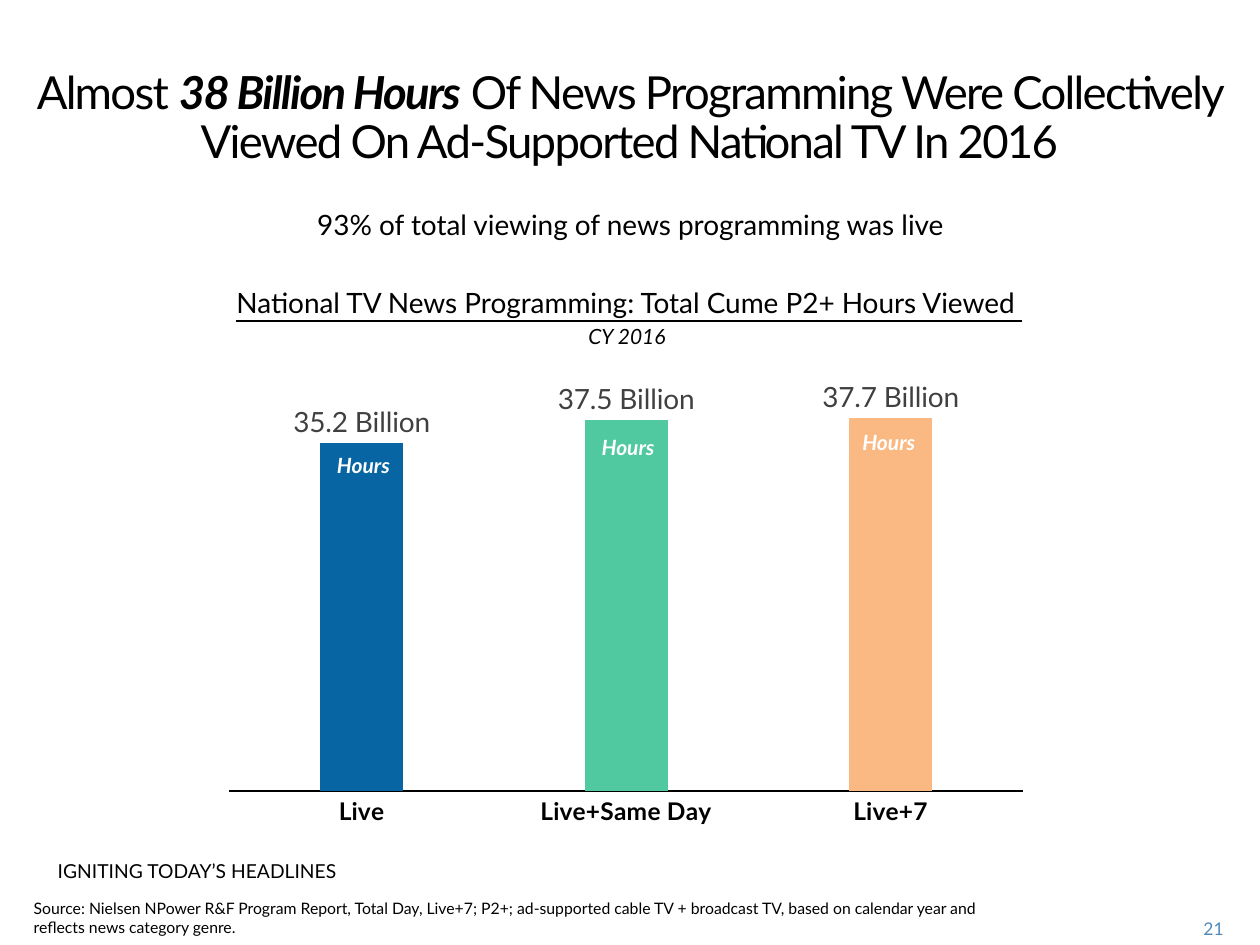
from lxml import etree
from pptx import Presentation
from pptx.chart.data import CategoryChartData
from pptx.dml.color import RGBColor
from pptx.enum.chart import XL_CHART_TYPE, XL_LABEL_POSITION, XL_TICK_MARK
from pptx.enum.text import MSO_ANCHOR, PP_ALIGN
from pptx.oxml.ns import qn
from pptx.util import Pt


def style(font, color, **values):
    font.name = "Lato"
    font.color.rgb = RGBColor.from_string(color)
    for name, value in values.items():
        setattr(font, name, value)


def add_text(s, box, paragraphs, align=PP_ALIGN.CENTER, color="000000"):
    """Each paragraph is a list of (text, format values) runs."""
    sp = s.shapes.add_textbox(*[Pt(v) for v in box])
    tf = sp.text_frame
    tf.word_wrap = True
    for i, runs in enumerate(paragraphs):
        p = tf.add_paragraph() if i else tf.paragraphs[0]
        p.alignment = align
        if i:
            p.space_before = Pt(2.4)
        for text, values in runs:
            r = p.add_run()
            r.text = text
            style(r.font, color, **values)
    return tf


prs = Presentation()
prs.slide_width, prs.slide_height = Pt(720), Pt(540)
s = prs.slides.add_slide(prs.slide_layouts[6])

# Title, with tightened letter spacing
size = {"size": Pt(26)}
tf = add_text(s, (13, 36, 693.4, 49), [[
    ("Almost ", size),
    ("38 Billion Hours", {**size, "bold": True, "italic": True}),
    (" Of News Programming Were Collectively Viewed On Ad-Supported National TV In 2016", size),
]])
tf.margin_left = tf.margin_right = 0
p = tf.paragraphs[0]
p.line_spacing = Pt(28)
for r in p.runs:
    r.font._element.set("spc", "-100")

# Subtitle and chart heading
add_text(s, (13.7, 115.2, 693.4, 28.8),
         [[("93% of total viewing of news programming was live", {"size": Pt(16)})]])
add_text(s, (13, 159.8, 693.4, 28.8), [
    [("National TV News Programming: Total Cume P2+ Hours Viewed ",
      {"size": Pt(16), "underline": True})],
    [("CY 2016 ", {"size": Pt(12), "italic": True})],
])

# Column chart
data = CategoryChartData()
data.categories = ["Live", "Live+Same Day", "Live+7"]
data.add_series("Hours viewed", [35.2, 37.5, 37.7])
chart = s.shapes.add_chart(XL_CHART_TYPE.COLUMN_CLUSTERED, Pt(121.7), Pt(217.4),
                           Pt(472.3), Pt(260.6), data).chart
chart.has_legend = chart.has_title = False
style(chart.font, "000000", size=Pt(10))

axis = chart.category_axis
axis.major_tick_mark = XL_TICK_MARK.NONE
axis.format.line.color.rgb = RGBColor.from_string("000000")
axis.format.line.width = Pt(0.75)
style(axis.tick_labels.font, "000000", size=Pt(14), bold=True)

axis = chart.value_axis
axis.minimum_scale, axis.maximum_scale = 0, 40
axis.has_major_gridlines = False
axis.visible = False

plot = chart.plots[0]
plot.gap_width, plot.overlap = 219, -27
plot.vary_by_categories = False
for i, color in enumerate(["0765A3", "50C8A0", "FAB982"]):
    fill = plot.series[0].points[i].format.fill
    fill.solid()
    fill.fore_color.rgb = RGBColor.from_string(color)

plot.has_data_labels = True
labels = plot.data_labels
labels.show_value = True
labels.number_format = '0.0" Billion"'
labels.number_format_is_linked = False
labels.position = XL_LABEL_POSITION.OUTSIDE_END
style(labels.font, "404040", size=Pt(16), bold=False)

# Fixed inner plot area
area = chart._chartSpace.chart.plotArea
for old in area.findall(qn("c:layout")):
    area.remove(old)
layout = etree.Element(qn("c:layout"))
area.insert(0, layout)
manual = etree.SubElement(layout, qn("c:manualLayout"))
for tag, value in [("layoutTarget", "inner"), ("xMode", "edge"), ("yMode", "edge"),
                   ("x", "0.02"), ("y", "0.03"), ("w", "0.96"), ("h", "0.87")]:
    etree.SubElement(manual, qn(f"c:{tag}")).set("val", value)

# Unit captions inside the bars
for left, top in [(183.6, 254.9), (334.8, 244.8), (483.8, 241.9)]:
    tf = add_text(s, (left, top, 48.2, 21.6),
                  [[("Hours", {"size": Pt(12), "bold": True, "italic": True})]],
                  color="FFFFFF")
    tf.word_wrap = False

# Footer: tagline, source, slide number
add_text(s, (25.9, 487.4, 195.8, 33.8),
         [[("IGNITING TODAY’S HEADLINES", {"size": Pt(11)})]], PP_ALIGN.LEFT)
add_text(s, (12.2, 509.8, 568.8, 25.2), [[(
    "Source: Nielsen NPower R&F Program Report, Total Day, Live+7; P2+; ad-supported cable TV "
    "+ broadcast TV, based on calendar year and reflects news category genre.",
    {"size": Pt(9)})]], PP_ALIGN.LEFT)
tf = add_text(s, (662.4, 521.3, 43.9, 18), [[("21", {"size": Pt(10)})]],
              PP_ALIGN.RIGHT, "508ABA")
tf.vertical_anchor = MSO_ANCHOR.MIDDLE

prs.save("out.pptx")
